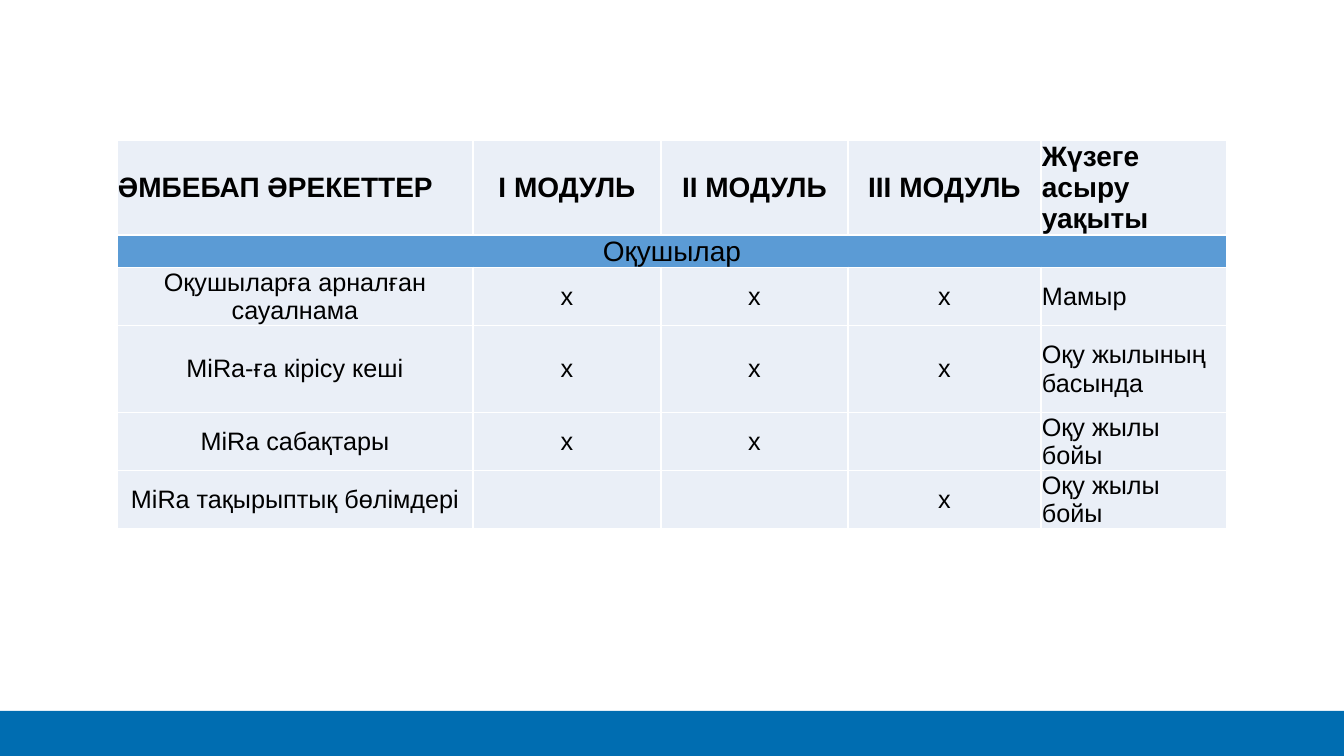
"""Build a slide with the table of universal actions by module."""
from dataclasses import dataclass

from lxml.etree import SubElement
from pptx import Presentation
from pptx.dml.color import RGBColor as Rgb
from pptx.enum.shapes import MSO_SHAPE as Shape
from pptx.enum.text import MSO_ANCHOR as Anchor, PP_ALIGN as Align
from pptx.oxml.ns import qn
from pptx.util import Pt

HEADINGS = ("ӘМБЕБАП ӘРЕКЕТТЕР", "І МОДУЛЬ", "ІІ МОДУЛЬ", "ІІІ МОДУЛЬ", "Жүзеге асыру уақыты")
AUDIENCE = ("Оқушылар", "", "", "", "")
ACTIONS = [
    ("Оқушыларға арналған сауалнама", "x", "x", "x", "Мамыр"),
    ("MiRa-ға кірісу кеші", "x", "x", "x", "Оқу жылының басында"),
    ("MiRa cабақтары", "x", "x", "", "Оқу жылы бойы\u00a0"),
    ("MiRa тақырыптық бөлімдері", "", "", "x", "Оқу жылы бойы"),
]
COLUMNS = (356, 188, 187, 193, 186)
ROWS = (95, 31, 58, 87, 58, 58)
SLIDE = (1344, 756)
TABLE_AT = (117, 140)
BAR_HEIGHT = 45


@dataclass(frozen=True)
class Theme:
    """Colours, font and type sizes of the slide."""
    font: str = "Arial"
    text: str = "000000"
    pale: str = "EAEFF7"
    band: str = "5B9BD5"
    bar: str = "006DB1"
    border: str = "FFFFFF"
    large: int = 20
    body: int = 18


THEME = Theme()


def px(length):
    """Turn px into EMU."""
    return round(length * 914400 / 100.8)


def paint(part, colour):
    """Fill a shape or cell with a solid colour."""
    part.fill.solid()
    part.fill.fore_color.rgb = Rgb.from_string(colour)


def add_borders(cell):
    """Draw a thin line on each side of a cell."""
    properties = cell._tc.get_or_add_tcPr()
    for position, side in enumerate(("lnL", "lnR", "lnT", "lnB")):
        line = SubElement(properties, qn(f"a:{side}"), w=str(Pt(1)))
        solid = SubElement(line, qn("a:solidFill"))
        SubElement(solid, qn("a:srgbClr"), val=THEME.border)
        properties.insert(position, line)


def write_cell(cell, words, size, bold, align, colour):
    """Set the text and look of one cell."""
    paint(cell, colour)
    add_borders(cell)
    cell.margin_left = cell.margin_right = cell.margin_top = px(1)
    cell.margin_bottom = 0
    cell.vertical_anchor = Anchor.MIDDLE
    cell.text = words
    paragraph = cell.text_frame.paragraphs[0]
    paragraph.alignment = align
    font = paragraph.font
    font.name, font.size, font.bold = THEME.font, Pt(size), bold
    font.color.rgb = Rgb.from_string(THEME.text)


def add_schedule(slide):
    """Add the table of actions."""
    entries = [HEADINGS, AUDIENCE, *ACTIONS]
    schedule = slide.shapes.add_table(
        len(ROWS), len(COLUMNS), *map(px, (*TABLE_AT, sum(COLUMNS), sum(ROWS)))).table
    schedule.first_row = schedule.horz_banding = False
    for column, width in zip(schedule.columns, COLUMNS):
        column.width = px(width)
    for row, height in zip(schedule.rows, ROWS):
        row.height = px(height)
    last = len(COLUMNS) - 1
    for r, entry in enumerate(entries):
        heading, audience = entry is HEADINGS, entry is AUDIENCE
        size = THEME.large if heading or audience else THEME.body
        colour = THEME.band if audience else THEME.pale
        for c, words in enumerate(entry):
            at_left = c == last or (heading and c == 0)
            align = Align.LEFT if at_left else Align.CENTER
            write_cell(schedule.cell(r, c), words, size, heading, align, colour)
    band = entries.index(AUDIENCE)
    schedule.cell(band, 0).merge(schedule.cell(band, last))


def main():
    """Build and save the slide."""
    deck = Presentation()
    deck.slide_width, deck.slide_height = map(px, SLIDE)
    slide = deck.slides.add_slide(deck.slide_layouts[6])
    width, height = SLIDE
    bar = slide.shapes.add_shape(
        Shape.RECTANGLE, *map(px, (0, height - BAR_HEIGHT, width, BAR_HEIGHT)))
    bar.shadow.inherit = False
    paint(bar, THEME.bar)
    bar.line.fill.background()
    add_schedule(slide)
    deck.save("out.pptx")


if __name__ == "__main__":
    main()
